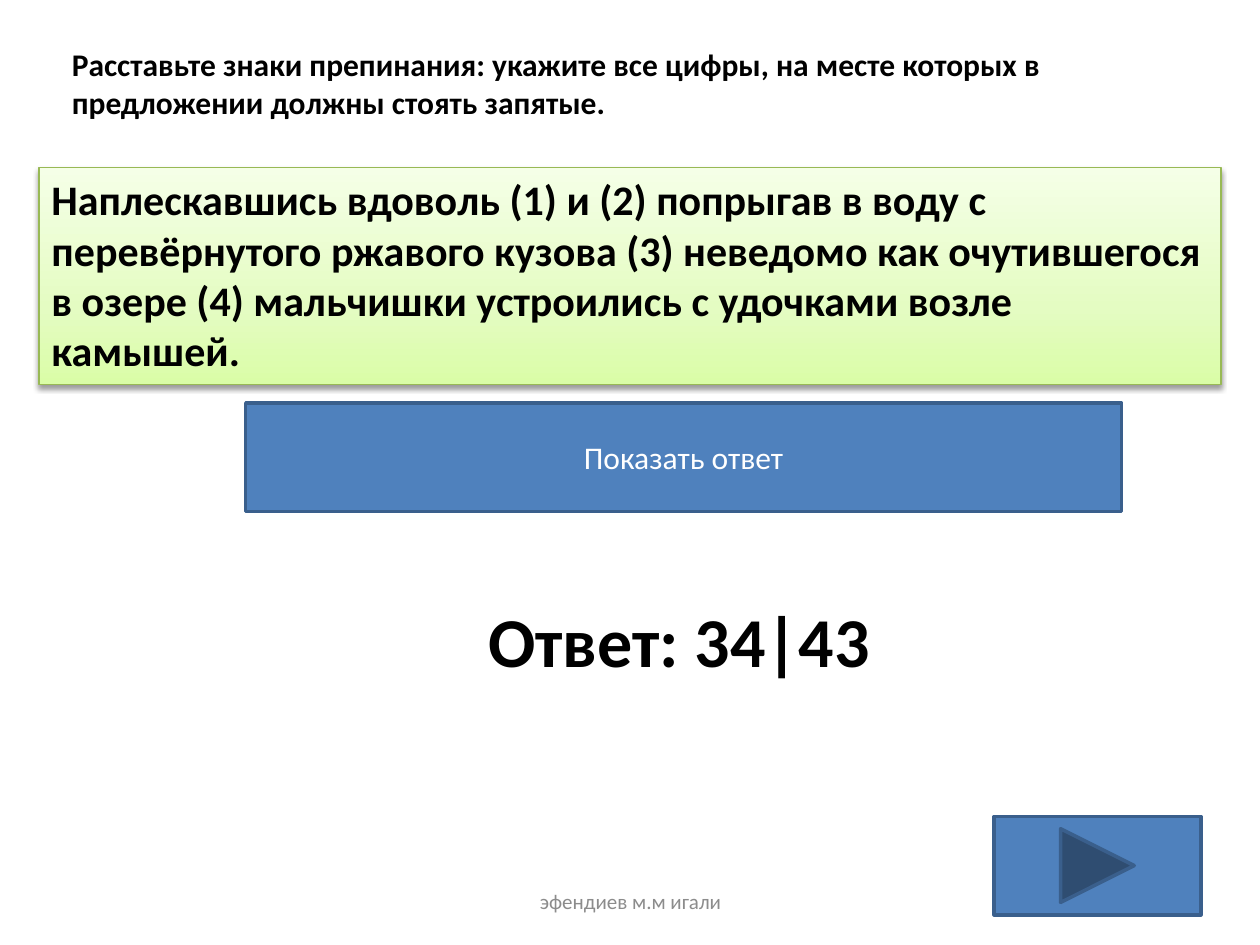
from lxml import etree
from pptx import Presentation
from pptx.dml.color import RGBColor
from pptx.enum.shapes import MSO_SHAPE
from pptx.enum.text import MSO_ANCHOR, MSO_AUTO_SIZE, PP_ALIGN
from pptx.oxml.ns import qn
from pptx.util import Inches, Pt

RECTANGLE = MSO_SHAPE.RECTANGLE
BLANK_BUTTON = MSO_SHAPE.ACTION_BUTTON_CUSTOM
NEXT_BUTTON = MSO_SHAPE.ACTION_BUTTON_FORWARD_OR_NEXT
TOP, MIDDLE = MSO_ANCHOR.TOP, MSO_ANCHOR.MIDDLE
LEFT, CENTER = PP_ALIGN.LEFT, PP_ALIGN.CENTER
NO_AUTOFIT = MSO_AUTO_SIZE.NONE
TITLE_ONLY = 5
FONT = "Calibri"

COLORS = {
    "text": "000000",
    "button_text": "FFFFFF",
    "footer": "8C8C8C",
    "button": "4F81BD",
    "button_line": "3A5F8C",
    "sentence_line": "98B955",
    "shadow": "000000",
    "gradient_bottom": "DAFDA7",
    "gradient_middle": "E4FCC2",
    "gradient_top": "F5FFE7",
}


def rgb(name):
    return RGBColor.from_string(COLORS[name])


def write_text(shape, text, size=18, color="text", bold=False, align=LEFT, anchor=TOP):
    frame = shape.text_frame
    frame.word_wrap = True
    frame.auto_size = NO_AUTOFIT
    frame.vertical_anchor = anchor
    paragraph = frame.paragraphs[0]
    paragraph.alignment = align
    run = paragraph.add_run()
    run.text = text
    run.font.name = FONT
    run.font.size = Pt(size)
    run.font.bold = bold
    run.font.color.rgb = rgb(color)


def place_title(slide, box, text, **text_format):
    title = slide.shapes.title
    title.left, title.top, title.width, title.height = map(Inches, box)
    write_text(title, text, **text_format)


def add_text(slide, box, text, **text_format):
    shape = slide.shapes.add_textbox(*map(Inches, box))
    write_text(shape, text, **text_format)


def add_outlined_shape(slide, kind, box, line, line_width):
    shape = slide.shapes.add_shape(kind, *map(Inches, box))
    shape.shadow.inherit = False
    shape.line.color.rgb = rgb(line)
    shape.line.width = Pt(line_width)
    return shape


def add_button(slide, kind, box):
    shape = add_outlined_shape(slide, kind, box, "button_line", 2)
    shape.fill.solid()
    shape.fill.fore_color.rgb = rgb("button")
    return shape


def add_color(parent, name):
    return etree.SubElement(parent, qn("a:srgbClr"), val=COLORS[name])


def set_gradient(shape, stops, angle):
    shape.fill.gradient()
    shape.fill.gradient_angle = angle
    stop_list = shape._element.spPr.find(f".//{qn('a:gsLst')}")
    for stop in list(stop_list):
        stop_list.remove(stop)
    for percent, name in stops:
        stop = etree.SubElement(stop_list, qn("a:gs"), pos=str(percent * 1000))
        add_color(stop, name)


def set_shadow(shape, blur, distance, angle, opacity):
    effects = shape._element.spPr.find(qn("a:effectLst"))
    shadow = etree.SubElement(
        effects,
        qn("a:outerShdw"),
        blurRad=str(Pt(blur)),
        dist=str(Pt(distance)),
        dir=str(angle * 60000),
        rotWithShape="0",
    )
    color = add_color(shadow, "shadow")
    etree.SubElement(color, qn("a:alpha"), val=str(opacity * 1000))


def add_sentence(slide, box, text):
    shape = add_outlined_shape(slide, RECTANGLE, box, "sentence_line", 0.75)
    stops = [(0, "gradient_bottom"), (35, "gradient_middle"), (100, "gradient_top")]
    set_gradient(shape, stops, angle=90)
    set_shadow(shape, blur=3.1, distance=1.6, angle=90, opacity=38)
    write_text(shape, text, size=24, bold=True)


def main():
    presentation = Presentation()
    presentation.slide_width = Inches(10)
    presentation.slide_height = Inches(7.5)
    slide = presentation.slides.add_slide(presentation.slide_layouts[TITLE_ONLY])

    place_title(
        slide,
        (0.47, 0.31, 9.22, 0.71),
        "Расставьте знаки препинания: укажите все цифры, на месте которых в "
        "предложении должны стоять запятые.",
        bold=True,
    )
    add_sentence(
        slide,
        (0.31, 1.33, 9.38, 1.72),
        "Наплескавшись вдоволь (1) и (2) попрыгав в воду с перевёрнутого ржавого "
        "кузова (3) неведомо как очутившегося в озере (4) мальчишки устроились "
        "с удочками возле камышей.",
    )
    answer_button = add_button(slide, BLANK_BUTTON, (1.95, 3.2, 6.95, 0.86))
    write_text(
        answer_button, "Показать ответ", color="button_text", align=CENTER, anchor=MIDDLE
    )
    add_text(
        slide, (1.95, 4.69, 6.88, 0.77), "Ответ: 34|43", size=40, bold=True, align=CENTER
    )
    add_text(
        slide,
        (3.42, 6.95, 3.17, 0.4),
        "эфендиев м.м игали",
        size=12,
        color="footer",
        align=CENTER,
        anchor=MIDDLE,
    )
    add_button(slide, NEXT_BUTTON, (7.89, 6.48, 1.64, 0.78))

    presentation.save("out.pptx")


if __name__ == "__main__":
    main()
